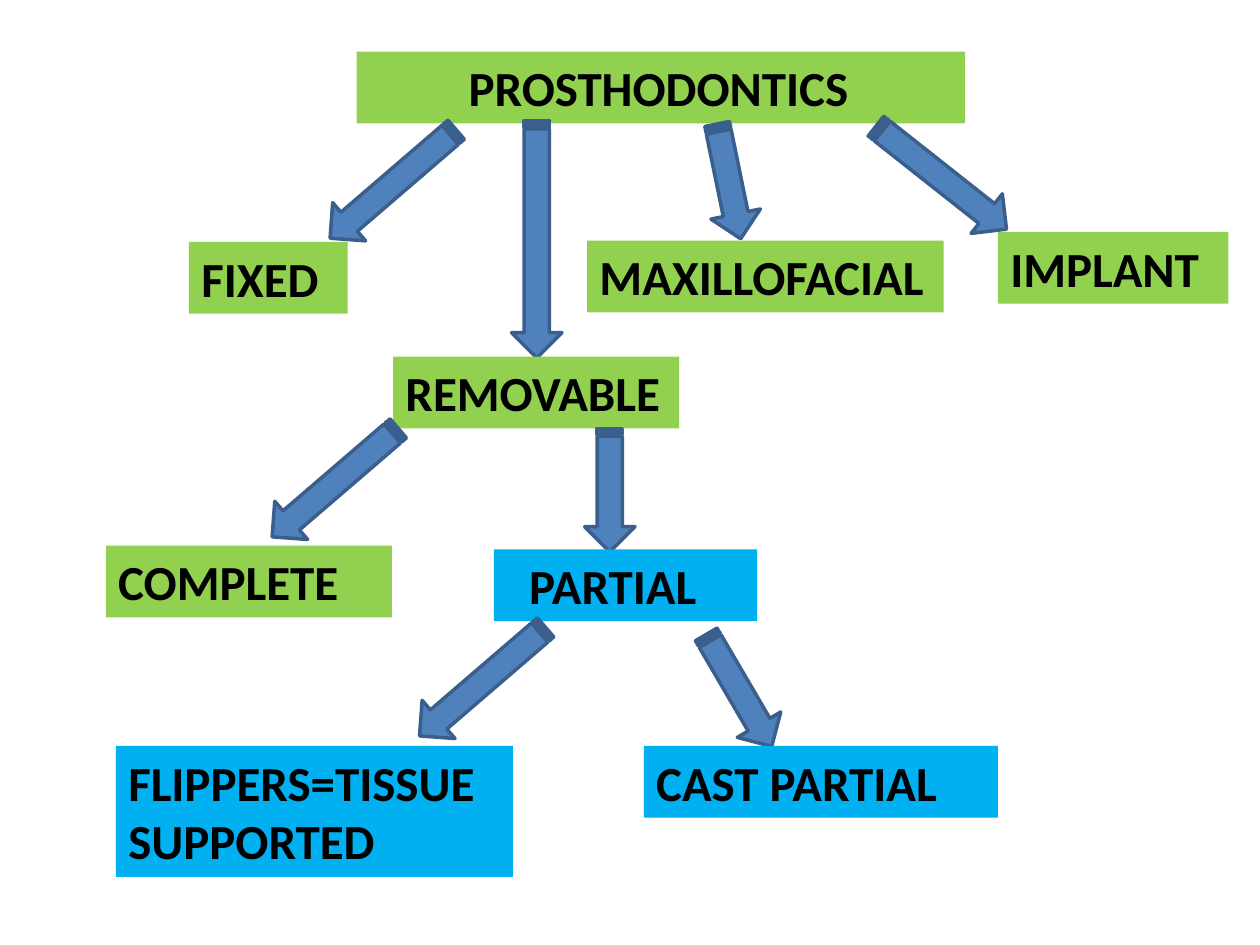
from dataclasses import dataclass

from pptx import Presentation
from pptx.dml.color import RGBColor as RGB
from pptx.enum.shapes import MSO_SHAPE as SHAPE
from pptx.enum.text import MSO_AUTO_SIZE as AUTO, PP_ALIGN as ALIGN
from pptx.util import Inches, Pt


@dataclass(frozen=True)
class Theme:
    font: str = "Calibri"
    size: int = 28
    text: str = "000000"
    green: str = "92D050"
    blue: str = "00B0F0"
    arrow: str = "4F81BD"
    edge: str = "3A5F8C"
    edge_width: int = 2


def write(tf, text, *, font, size, color, bold=True, align=ALIGN.LEFT):
    p = tf.paragraphs[0]
    p.alignment = align
    r = p.add_run()
    r.text = text
    r.font.name, r.font.size, r.font.bold = font, Pt(size), bold
    r.font.color.rgb = RGB.from_string(color)


class Chart:
    """Draws the boxes and arrows of a hierarchy on one slide."""

    box_height = 0.57
    arrow_height = 0.4
    inset = 0.1

    def __init__(self, slide, theme):
        self.s, self.theme = slide, theme

    def box(self, text, left, top, width, color, height=box_height, indent=0):
        t = self.theme
        sp = self.s.shapes.add_textbox(*map(Inches, (left, top, width, height)))
        sp.fill.solid()
        sp.fill.fore_color.rgb = RGB.from_string(color)
        tf = sp.text_frame
        tf.word_wrap = True
        tf.auto_size = AUTO.SHAPE_TO_FIT_TEXT
        tf.margin_left = Inches(self.inset + indent)
        write(tf, text, font=t.font, size=t.size, color=t.text)

    def arrow(self, left, top, length, angle):
        t = self.theme
        sp = self.s.shapes.add_shape(
            SHAPE.STRIPED_RIGHT_ARROW,
            *map(Inches, (left, top, length, self.arrow_height)))
        sp.rotation = angle
        sp.shadow.inherit = False
        sp.fill.solid()
        sp.fill.fore_color.rgb = RGB.from_string(t.arrow)
        sp.line.color.rgb = RGB.from_string(t.edge)
        sp.line.width = Pt(t.edge_width)


def main():
    prs = Presentation()
    prs.slide_width, prs.slide_height = Inches(10), Inches(7.5)
    theme = Theme()
    chart = Chart(prs.slides.add_slide(prs.slide_layouts[6]), theme)
    green, blue = theme.green, theme.blue
    down, down_left, branch = 90, 139.3, 1.32

    chart.box("PROSTHODONTICS", 2.83, 0.41, 4.83, green, indent=0.79)
    chart.arrow(2.46, 1.26, branch, down_left)
    chart.arrow(6.81, 1.21, branch, 38.3)
    chart.arrow(5.32, 1.24, 0.93, 78.4)
    chart.arrow(3.32, 1.7, 1.88, down)
    chart.box("FIXED", 1.5, 1.92, 1.26, green)
    chart.box("REMOVABLE", 3.12, 2.83, 2.27, green)
    chart.box("MAXILLOFACIAL", 4.66, 1.91, 2.83, green)
    chart.box("IMPLANT", 7.92, 1.84, 1.83, green)

    chart.arrow(2, 3.63, branch, down_left)
    chart.arrow(4.35, 3.69, 0.98, down)
    chart.box("COMPLETE", 0.84, 4.33, 2.27, green)
    chart.box("PARTIAL", 3.92, 4.36, 2.09, blue, indent=0.18)

    chart.arrow(3.17, 5.21, branch, down_left)
    chart.arrow(5.35, 5.28, 1.03, 59.7)
    chart.box("FLIPPERS=TISSUE SUPPORTED", 0.92, 5.92, 3.15, blue, height=1.04)
    chart.box("CAST PARTIAL", 5.11, 5.92, 2.81, blue)

    prs.save("out.pptx")


if __name__ == "__main__":
    main()
